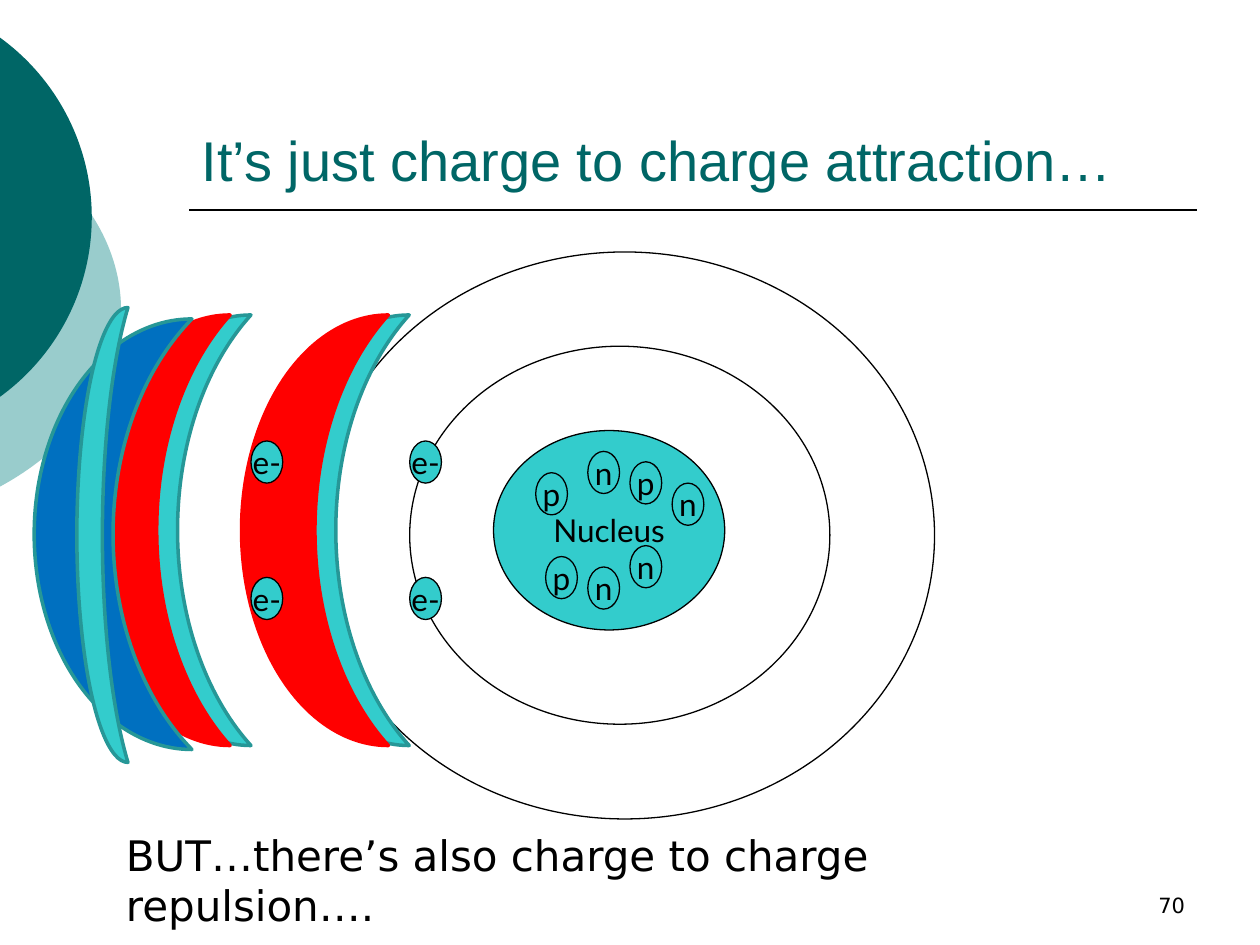
"""Build the slide on charge attraction and repulsion around a nucleus."""
from lxml.etree import SubElement
from pptx import Presentation
from pptx.dml.color import RGBColor
from pptx.enum.shapes import MSO_CONNECTOR as Connector, MSO_SHAPE as Shape
from pptx.enum.text import MSO_ANCHOR as Anchor, PP_ALIGN as Align
from pptx.oxml.ns import qn
from pptx.util import Cm, Pt

COLORS = {
    "ink": "000000",
    "title": "006666",
    "pale": "99CCCC",
    "teal": "33CCCC",
    "edge": "269797",
    "red": "FF0000",
    "blue": "0070C0",
}
PARTICLE_SIZE = (0.64, 0.85)
PROTONS = [(11, 11.22), (10.8, 9.53), (12.7, 9.31)]
NEUTRONS = [(13.55, 9.74), (11.85, 9.1), (12.7, 11), (11.85, 11.43)]
ELECTRON_TOPS = (8.89, 11.64)


def color(name):
    return RGBColor.from_string(COLORS[name])


def write(holder, text, font="Lato", size=18, ink="ink", align=Align.LEFT,
          anchor=Anchor.TOP, wrap=True):
    frame = holder.text_frame
    frame.word_wrap = wrap
    frame.vertical_anchor = anchor
    line = frame.paragraphs[0]
    line.alignment = align
    run = line.add_run()
    run.text = text
    run.font.name = font
    run.font.size = Pt(size)
    run.font.color.rgb = color(ink)


def paint(shape, fill=None, edge=None, width=0.75):
    shape.shadow.inherit = False
    if fill:
        shape.fill.solid()
        shape.fill.fore_color.rgb = color(fill)
    else:
        shape.fill.background()
    if edge:
        shape.line.color.rgb = color(edge)
        shape.line.width = Pt(width)
    else:
        shape.line.fill.background()


def add_edge_disc(slide, box, middle, half, depth, fill):
    """Draw the part of a disc that reaches in from the left slide edge."""
    left, top, width, height = box
    upper = [(0.62 * depth, middle - 0.77 * half), (depth, middle - 0.4 * half)]
    lower = [(x, 2 * middle - y) for x, y in reversed(upper)]
    start, tip, end = (0, middle - half), (depth, middle), (0, middle + half)

    builder = slide.shapes.build_freeform(Cm(0), Cm(start[1]))
    builder.add_line_segments([(Cm(x), Cm(y)) for x, y in (tip, end)])
    disc = builder.convert_to_shape()
    disc.left, disc.top, disc.width, disc.height = map(Cm, box)
    paint(disc, fill)

    outline = next(disc._element.iter(qn("a:path")))
    outline.set("w", str(Cm(width)))
    outline.set("h", str(Cm(height)))
    for step in list(outline):
        outline.remove(step)
    for kind, points in (("a:moveTo", [start]),
                         ("a:cubicBezTo", [*upper, tip]),
                         ("a:cubicBezTo", [*lower, end]),
                         ("a:close", [])):
        step = SubElement(outline, qn(kind))
        for x, y in points:
            SubElement(step, qn("a:pt"), x=str(Cm(x - left)), y=str(Cm(y - top)))


def add_rule(slide, left, right, top):
    rule = slide.shapes.add_connector(
        Connector.STRAIGHT, Cm(left), Cm(top), Cm(right), Cm(top))
    rule.line.color.rgb = color("ink")
    rule.line.width = Pt(1)
    SubElement(rule._element.spPr, qn("a:effectLst"))


def add_title(slide, text):
    title = slide.shapes.title
    title.left, title.top, title.width, title.height = map(
        Cm, (3.81, 0.84, 20.32, 3.18))
    write(title, text, font="Arial", size=32, ink="title", anchor=Anchor.BOTTOM)


def add_ellipse(slide, box, fill=None, label=None):
    ellipse = slide.shapes.add_shape(Shape.OVAL, *map(Cm, box))
    paint(ellipse, fill, "ink")
    if label:
        write(ellipse, label, align=Align.CENTER, anchor=Anchor.MIDDLE, wrap=False)


def add_particles(slide, label, places):
    for place in places:
        add_ellipse(slide, (*place, *PARTICLE_SIZE), "teal", label)


def add_electrons(slide, left):
    add_particles(slide, "e-", [(left, top) for top in ELECTRON_TOPS])


def add_moon(slide, box, fill, edge="edge"):
    moon = slide.shapes.add_shape(Shape.MOON, *map(Cm, box))
    paint(moon, fill, edge, 2)


def add_moon_pair(slide, left):
    add_moon(slide, (left, 6.35, 2.96, 8.68), "teal")
    add_moon(slide, (left - 0.42, 6.35, 2.96, 8.68), "red", "red")


def add_note(slide, box, text, **style):
    note = slide.shapes.add_textbox(*map(Cm, box))
    write(note, text, font="DejaVu Sans", **style)


def main():
    deck = Presentation()
    deck.slide_width, deck.slide_height = Cm(25.4), Cm(19.05)
    slide = deck.slides.add_slide(deck.slide_layouts[5])

    add_edge_disc(slide, (-8.99, 1.9, 11.43, 8.69), 6.25, 3.56, 2.44, "pale")
    add_edge_disc(slide, (-6.73, 0, 8.59, 8.76), 4.38, 3.62, 1.85, "title")
    add_rule(slide, 3.81, 24.13, 4.24)
    add_title(slide, "It’s just charge to charge attraction…")

    add_ellipse(slide, (9.95, 8.68, 4.66, 4.02), "teal", "Nucleus")
    add_ellipse(slide, (8.26, 6.98, 8.47, 7.62))
    add_ellipse(slide, (6.35, 5.08, 12.49, 11.43))
    add_particles(slide, "p", PROTONS)
    add_particles(slide, "n", NEUTRONS)
    add_electrons(slide, 8.26)
    add_note(slide, (2.29, 16.59, 20.55, 1.27),
             "BUT…there’s also charge to charge repulsion….", size=24)

    add_moon_pair(slide, 5.29)
    add_electrons(slide, 5.06)
    add_moon_pair(slide, 2.1)
    add_moon(slide, (0.69, 6.43, 3.18, 8.68), "blue")
    add_moon(slide, (1.55, 6.2, 1.03, 9.17), "teal")
    add_note(slide, (18.21, 17.35, 5.93, 1.27), "70", size=12,
             align=Align.RIGHT, anchor=Anchor.BOTTOM)
    deck.save("out.pptx")


if __name__ == "__main__":
    main()
